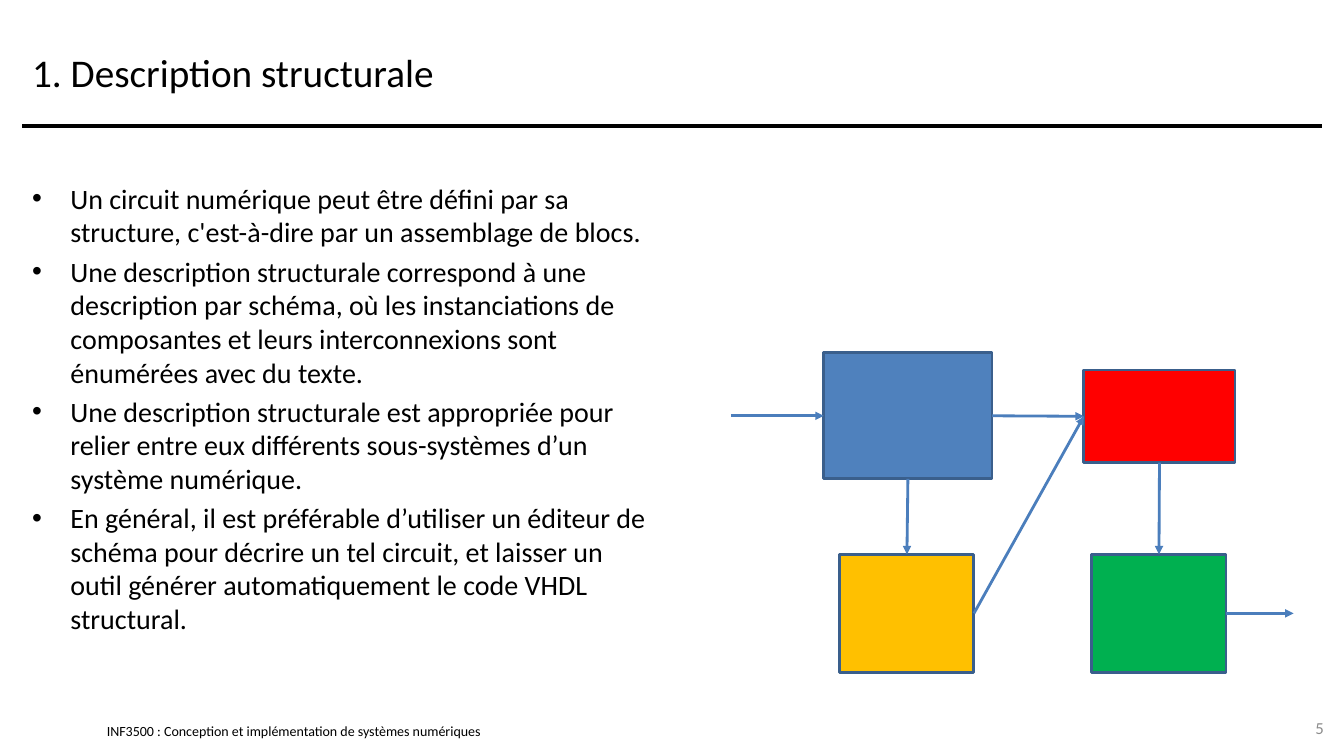
from dataclasses import dataclass
from typing import Optional

from lxml.etree import SubElement
from pptx import Presentation
from pptx.dml.color import RGBColor
from pptx.enum.shapes import MSO_CONNECTOR, MSO_SHAPE
from pptx.enum.text import MSO_ANCHOR, PP_ALIGN
from pptx.oxml.ns import qn
from pptx.shapes.autoshape import Shape
from pptx.shapes.connector import Connector
from pptx.slide import Slide
from pptx.util import Inches, Pt

TOP, LEFT, BOTTOM, RIGHT = range(4)


@dataclass(frozen=True)
class Theme:
    font: str = "Calibri"
    ink: str = "000000"
    muted: str = "8C8C8C"
    outline: str = "3A5F8C"
    arrow: str = "4B7EBC"
    title_size: int = 28
    body_size: int = 20
    number_size: int = 12
    footer_size: int = 10
    rule_width: int = 3
    diagram_width: int = 2


@dataclass(frozen=True)
class Label:
    left: float
    top: float
    width: float
    height: float
    lines: tuple[str, ...]
    size: int
    color: str
    anchor: MSO_ANCHOR = MSO_ANCHOR.MIDDLE
    align: PP_ALIGN = PP_ALIGN.LEFT
    bulleted: bool = False
    inset: bool = True


@dataclass(frozen=True)
class Block:
    name: str
    left: float
    top: float
    width: float
    height: float
    fill: str

    def side(self, site: int) -> tuple[float, float]:
        across = {LEFT: 0, RIGHT: 1}.get(site, 0.5)
        down = {TOP: 0, BOTTOM: 1}.get(site, 0.5)
        return self.left + across * self.width, self.top + down * self.height


@dataclass(frozen=True)
class Arrow:
    source: Optional[str]
    source_site: int
    target: Optional[str]
    target_site: int
    free_length: float = 0


THEME = Theme()

POINTS = (
    "Un circuit numérique peut être défini par sa structure, c'est-à-dire par un assemblage de blocs.",
    "Une description structurale correspond à une description par schéma, où les instanciations de "
    "composantes et leurs interconnexions sont énumérées avec du texte.",
    "Une description structurale est appropriée pour relier entre eux différents sous-systèmes d’un "
    "système numérique.",
    "En général, il est préférable d’utiliser un éditeur de schéma pour décrire un tel circuit, et "
    "laisser un outil générer automatiquement le code VHDL structural.",
)

LABELS = (
    Label(1.06, 7.17, 5.11, 0.17, ("INF3500 : Conception et implémentation de systèmes numériques",),
          THEME.footer_size, THEME.ink, inset=False),
    Label(0.22, 0.17, 12.89, 1.08, ("1. Description structurale",), THEME.title_size, THEME.ink),
    Label(0.22, 1.75, 6.33, 5.08, POINTS, THEME.body_size, THEME.ink,
          anchor=MSO_ANCHOR.TOP, bulleted=True),
    Label(12.56, 7.02, 0.67, 0.4, ("5",), THEME.number_size, THEME.muted, align=PP_ALIGN.RIGHT),
)

BLOCKS = (
    Block("blue", 8.17, 3.5, 1.67, 1.25, "4F81BD"),
    Block("red", 10.75, 3.67, 1.5, 0.92, "FF0000"),
    Block("yellow", 8.33, 5.5, 1.33, 1.17, "FFC000"),
    Block("green", 10.83, 5.5, 1.33, 1.17, "00B050"),
)

ARROWS = (
    Arrow("blue", BOTTOM, "yellow", TOP),
    Arrow("blue", RIGHT, "red", LEFT),
    Arrow("yellow", RIGHT, "red", LEFT),
    Arrow("red", BOTTOM, "green", TOP),
    Arrow(None, RIGHT, "blue", LEFT, free_length=0.92),
    Arrow("green", RIGHT, None, LEFT, free_length=0.67),
)


def draw_label(page: Slide, label: Label) -> None:
    box = page.shapes.add_textbox(
        Inches(label.left), Inches(label.top), Inches(label.width), Inches(label.height))
    frame = box.text_frame
    frame.word_wrap = True
    frame.vertical_anchor = label.anchor
    if not label.inset:
        frame.margin_left = frame.margin_right = frame.margin_top = frame.margin_bottom = 0
    frame.text = "\n".join(label.lines)
    for index, para in enumerate(frame.paragraphs):
        para.alignment = label.align
        if label.bulleted:
            if index:
                para.space_before = Pt(label.size * 0.2)
            properties = para._p.get_or_add_pPr()
            properties.set("marL", str(Inches(0.38)))
            properties.set("indent", str(-Inches(0.38)))
            SubElement(properties, qn("a:buFont"), typeface="Arial")
            SubElement(properties, qn("a:buChar"), char="•")
        for span in para.runs:
            span.font.name = THEME.font
            span.font.size = Pt(label.size)
            span.font.color.rgb = RGBColor.from_string(label.color)


def draw_block(page: Slide, block: Block) -> Shape:
    shape = page.shapes.add_shape(
        MSO_SHAPE.RECTANGLE,
        Inches(block.left), Inches(block.top), Inches(block.width), Inches(block.height))
    shape.shadow.inherit = False
    shape.fill.solid()
    shape.fill.fore_color.rgb = RGBColor.from_string(block.fill)
    shape.line.color.rgb = RGBColor.from_string(THEME.outline)
    shape.line.width = Pt(THEME.diagram_width)
    return shape


def draw_line(page: Slide, start: tuple[float, float], end: tuple[float, float],
              color: str, width: int) -> Connector:
    line = page.shapes.add_connector(
        MSO_CONNECTOR.STRAIGHT, *(Inches(value) for value in (*start, *end)))
    line.line.color.rgb = RGBColor.from_string(color)
    line.line.width = Pt(width)
    SubElement(line._element.spPr, qn("a:effectLst"))
    return line


def draw_arrow(page: Slide, arrow: Arrow, blocks: dict[str, Block],
               shapes: dict[str, Shape]) -> None:
    start = blocks[arrow.source].side(arrow.source_site) if arrow.source else None
    end = blocks[arrow.target].side(arrow.target_site) if arrow.target else None
    start = start or (end[0] - arrow.free_length, end[1])
    end = end or (start[0] + arrow.free_length, start[1])
    line = draw_line(page, start, end, THEME.arrow, THEME.diagram_width)
    SubElement(line.line._get_or_add_ln(), qn("a:tailEnd"), type="triangle")
    if arrow.source:
        line.begin_connect(shapes[arrow.source], arrow.source_site)
    if arrow.target:
        line.end_connect(shapes[arrow.target], arrow.target_site)


def main() -> None:
    deck = Presentation()
    deck.slide_width = Inches(13.33)
    deck.slide_height = Inches(7.5)
    page = deck.slides.add_slide(deck.slide_layouts[6])
    draw_line(page, (0.22, 1.25), (13.11, 1.25), THEME.ink, THEME.rule_width)
    for label in LABELS:
        draw_label(page, label)
    blocks = {block.name: block for block in BLOCKS}
    shapes = {block.name: draw_block(page, block) for block in BLOCKS}
    for arrow in ARROWS:
        draw_arrow(page, arrow, blocks, shapes)
    deck.save("out.pptx")


if __name__ == "__main__":
    main()
